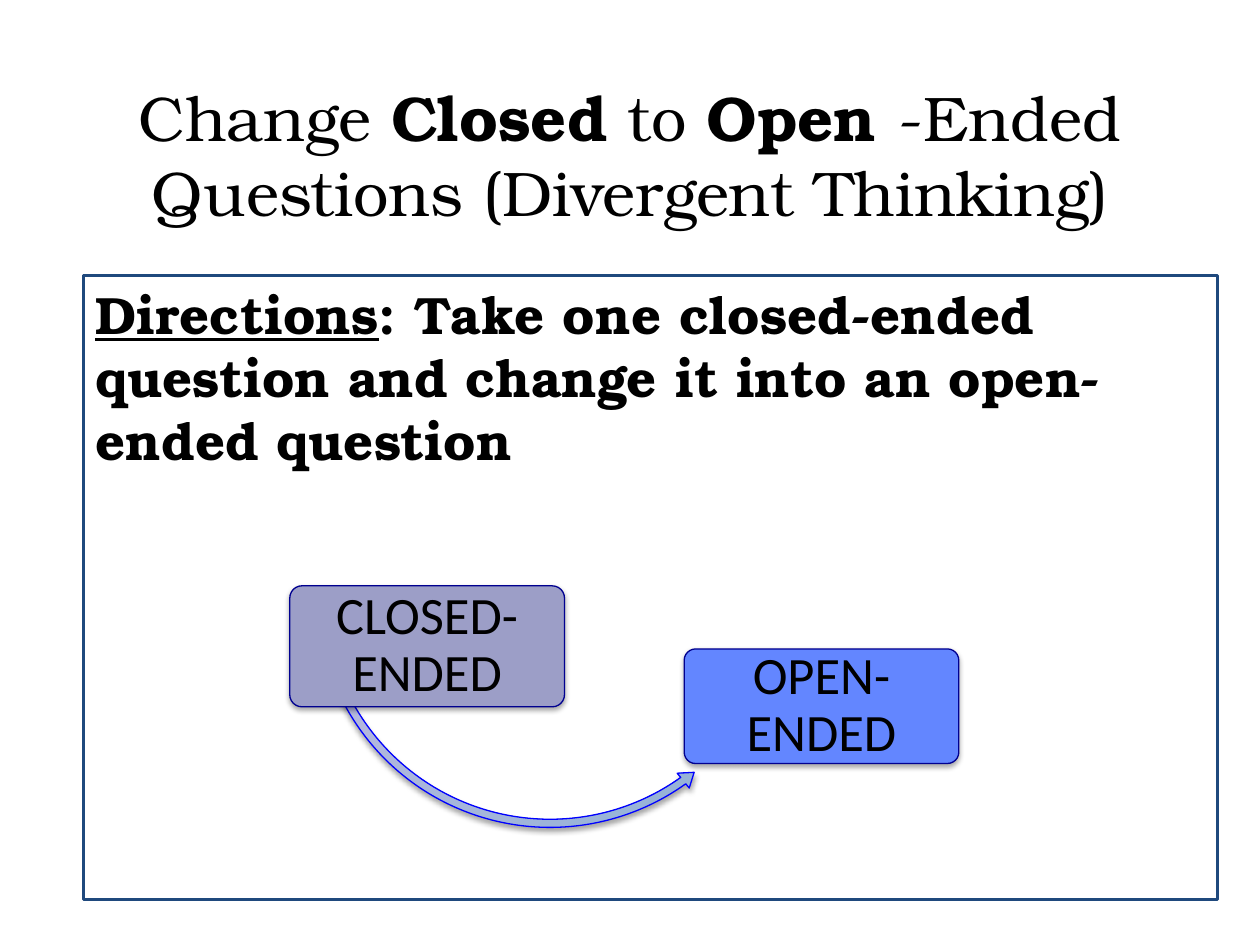
from lxml import etree
from pptx import Presentation
from pptx.dml.color import RGBColor
from pptx.enum.shapes import MSO_SHAPE
from pptx.enum.text import MSO_ANCHOR, PP_ALIGN
from pptx.oxml import parse_xml
from pptx.oxml.ns import nsdecls, qn
from pptx.util import Inches, Pt

RECTANGLE = MSO_SHAPE.RECTANGLE
ROUNDED = MSO_SHAPE.ROUNDED_RECTANGLE
CURVED_ARROW = MSO_SHAPE.LEFT_CIRCULAR_ARROW
TOP, MIDDLE = MSO_ANCHOR.TOP, MSO_ANCHOR.MIDDLE
LEFT, CENTER = PP_ALIGN.LEFT, PP_ALIGN.CENTER

SERIF, SANS = "TeX Gyre Bonum", "Calibri"
COLORS = {
    "text": "000000",
    "frame": "1F497D",
    "closed": "9C9EC7",
    "open": "6386FF",
    "card_line": "000090",
    "arrow_line": "0000FF",
    "arrow_inner": "95B3D7",
    "arrow_outer": "CABBE2",
    "shadow": "000000",
}


def rgb(name):
    return RGBColor.from_string(COLORS[name])


def add_outlined(slide, kind, box, line, width):
    shape = slide.shapes.add_shape(kind, *map(Inches, box))
    shape.shadow.inherit = False
    shape.fill.background()
    shape.line.color.rgb = rgb(line)
    shape.line.width = Pt(width)
    return shape


def add_soft_shadow(shape):
    effects = shape._element.spPr.find(qn("a:effectLst"))
    shadow = etree.SubElement(
        effects, qn("a:outerShdw"), blurRad=str(Pt(3.1)), dist=str(Pt(1.8)),
        dir="5400000", rotWithShape="0")
    color = etree.SubElement(shadow, qn("a:srgbClr"), val=COLORS["shadow"])
    etree.SubElement(color, qn("a:alpha"), val="35000")


def write_text(shape, parts, font, size, align, anchor):
    frame = shape.text_frame
    frame.word_wrap = True
    frame.vertical_anchor = anchor
    paragraph = frame.paragraphs[0]
    paragraph.alignment = align
    paragraph.font.name = font
    paragraph.font.size = Pt(size)
    paragraph.font.color.rgb = rgb("text")
    for text, bold, underline in parts:
        run = paragraph.add_run()
        run.text = text
        run.font.bold = bold
        run.font.underline = underline
    return paragraph


def add_title(slide):
    title = slide.shapes.add_textbox(*map(Inches, (0, 0.67, 10, 1.1)))
    parts = [
        ("Change ", False, False),
        ("Closed", True, False),
        (" to ", False, False),
        ("Open ", True, False),
        ("-Ended Questions (Divergent Thinking)", False, False),
    ]
    write_text(title, parts, SERIF, 36, CENTER, MIDDLE)


def add_directions(slide):
    directions = add_outlined(slide, RECTANGLE, (0.66, 2.19, 9, 4.95), "frame", 1.75)
    parts = [
        ("Directions", True, True),
        (": Take one closed-ended question and change it into an "
         "open-ended question", True, False),
    ]
    write_text(directions, parts, SERIF, 30, LEFT, TOP)


def add_curved_arrow(slide):
    arrow = add_outlined(slide, CURVED_ARROW, (2.47, 2.82, 3.79, 3.79), "arrow_line", 0.75)
    for index, value in enumerate((0.017, 2.058, 32.678, 103.11, 0.02)):
        arrow.adjustments[index] = value
    properties = arrow._element.spPr
    gradient = parse_xml(
        f'<a:gradFill {nsdecls("a")} rotWithShape="1"><a:gsLst>'
        f'<a:gs pos="12000"><a:srgbClr val="{COLORS["arrow_inner"]}"/></a:gs>'
        f'<a:gs pos="90000"><a:srgbClr val="{COLORS["arrow_outer"]}"/></a:gs>'
        '</a:gsLst><a:path path="circle">'
        '<a:fillToRect l="100000" t="100000"/></a:path></a:gradFill>')
    properties.replace(properties.find(qn("a:noFill")), gradient)
    add_soft_shadow(arrow)


def add_question_card(slide, label, box, fill):
    card = add_outlined(slide, ROUNDED, box, "card_line", 0.75)
    card.adjustments[0] = 0.1
    card.fill.solid()
    card.fill.fore_color.rgb = rgb(fill)
    add_soft_shadow(card)
    frame = card.text_frame
    frame.margin_left = frame.margin_right = Inches(0.06)
    frame.margin_top = frame.margin_bottom = Inches(0.04)
    paragraph = write_text(card, [(label, False, False)], SANS, 30, CENTER, MIDDLE)
    paragraph.line_spacing = 0.9


def main():
    presentation = Presentation()
    presentation.slide_width = Inches(10)
    presentation.slide_height = Inches(7.5)
    slide = presentation.slides.add_slide(presentation.slide_layouts[6])
    add_title(slide)
    add_directions(slide)
    add_curved_arrow(slide)
    add_question_card(slide, "CLOSED-ENDED", (2.3, 4.65, 2.18, 0.96), "closed")
    add_question_card(slide, "OPEN-ENDED", (5.43, 5.15, 2.18, 0.91), "open")
    presentation.save("out.pptx")


if __name__ == "__main__":
    main()
